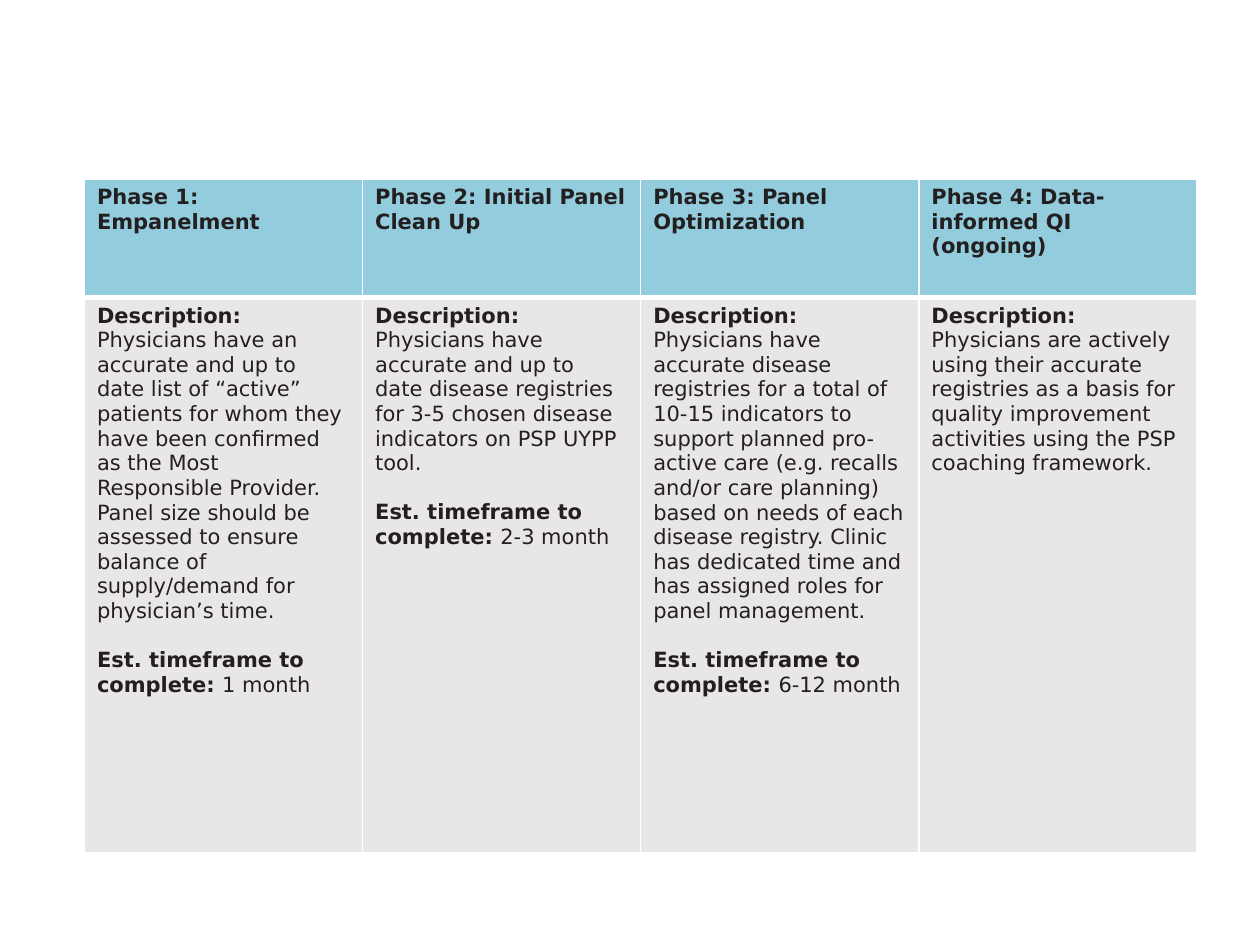
from dataclasses import dataclass

from lxml import etree
from pptx import Presentation
from pptx.dml.color import RGBColor
from pptx.oxml.ns import qn
from pptx.util import Inches, Pt


@dataclass(frozen=True)
class Theme:
    font: str = "DejaVu Sans"
    size: int = 12
    text: str = "231F20"
    header: str = "93CDDD"
    body: str = "E8E7E6"
    border: str = "FFFFFF"
    thin: int = 1
    thick: int = 3
    gap: int = 14


THEME = Theme()

# Heading, description, timeframe
PHASES = [
    ("Phase 1: Empanelment",
     "Physicians have an accurate and up to date list of “active” patients for whom "
     "they have been confirmed as the Most Responsible Provider. Panel size should be "
     "assessed to ensure balance of supply/demand for physician’s time.",
     "1 month"),
    ("Phase 2: Initial Panel Clean Up",
     "Physicians have accurate and up to date disease registries for 3-5 chosen "
     "disease indicators on PSP UYPP tool.",
     "2-3 month"),
    ("Phase 3: Panel Optimization",
     "Physicians have accurate disease registries for a total of 10-15 indicators to "
     "support planned pro-active care (e.g. recalls and/or care planning) based on "
     "needs of each disease registry. Clinic has dedicated time and has assigned roles "
     "for panel management.",
     "6-12 month"),
    ("Phase 4: Data-informed QI (ongoing)",
     "Physicians are actively using their accurate registries as a basis for quality "
     "improvement activities using the PSP coaching framework.",
     None),
]


def add_text(p, text, bold=False, size=THEME.size, color=THEME.text):
    r = p.add_run()
    r.text = text
    r.font.name = THEME.font
    r.font.size = Pt(size)
    r.font.bold = bold
    r.font.color.rgb = RGBColor.from_string(color)


def style_cell(cell, fill, top=THEME.thin, bottom=THEME.thin):
    cell.fill.solid()
    cell.fill.fore_color.rgb = RGBColor.from_string(fill)
    # Borders come before the fill in the cell properties
    tc_pr = cell._tc.get_or_add_tcPr()
    widths = {"lnL": THEME.thin, "lnR": THEME.thin, "lnT": top, "lnB": bottom}
    for i, (side, width) in enumerate(widths.items()):
        ln = etree.Element(qn(f"a:{side}"), w=str(Pt(width)))
        solid = etree.SubElement(ln, qn("a:solidFill"))
        etree.SubElement(solid, qn("a:srgbClr"), val=THEME.border)
        tc_pr.insert(i, ln)


def fill_description(tf, description, timeframe):
    p = tf.paragraphs[0]
    add_text(p, "Description: ", bold=True)
    add_text(p, description)
    if timeframe:
        p = tf.add_paragraph()
        p.space_before = Pt(THEME.gap)
        add_text(p, "Est. timeframe to complete: ", bold=True)
        add_text(p, timeframe)


def add_phase_table(slide, left, top, width, height, header_height):
    table = slide.shapes.add_table(2, len(PHASES), left, top, width, height).table
    table.rows[0].height = header_height
    table.rows[1].height = height - header_height
    for col, (heading, description, timeframe) in enumerate(PHASES):
        table.columns[col].width = width // len(PHASES)
        # Heading cell
        head = table.cell(0, col)
        style_cell(head, THEME.header, bottom=THEME.thick)
        add_text(head.text_frame.paragraphs[0], heading, bold=True)
        # Description cell
        body = table.cell(1, col)
        style_cell(body, THEME.body, top=THEME.thick)
        fill_description(body.text_frame, description, timeframe)


def main():
    prs = Presentation()
    prs.slide_width, prs.slide_height = Inches(10), Inches(7.5)
    slide = prs.slides.add_slide(prs.slide_layouts[6])
    add_phase_table(slide, Inches(0.67), Inches(1.42), Inches(8.83), Inches(5.35),
                    header_height=Inches(0.94))
    prs.save("out.pptx")


if __name__ == "__main__":
    main()
